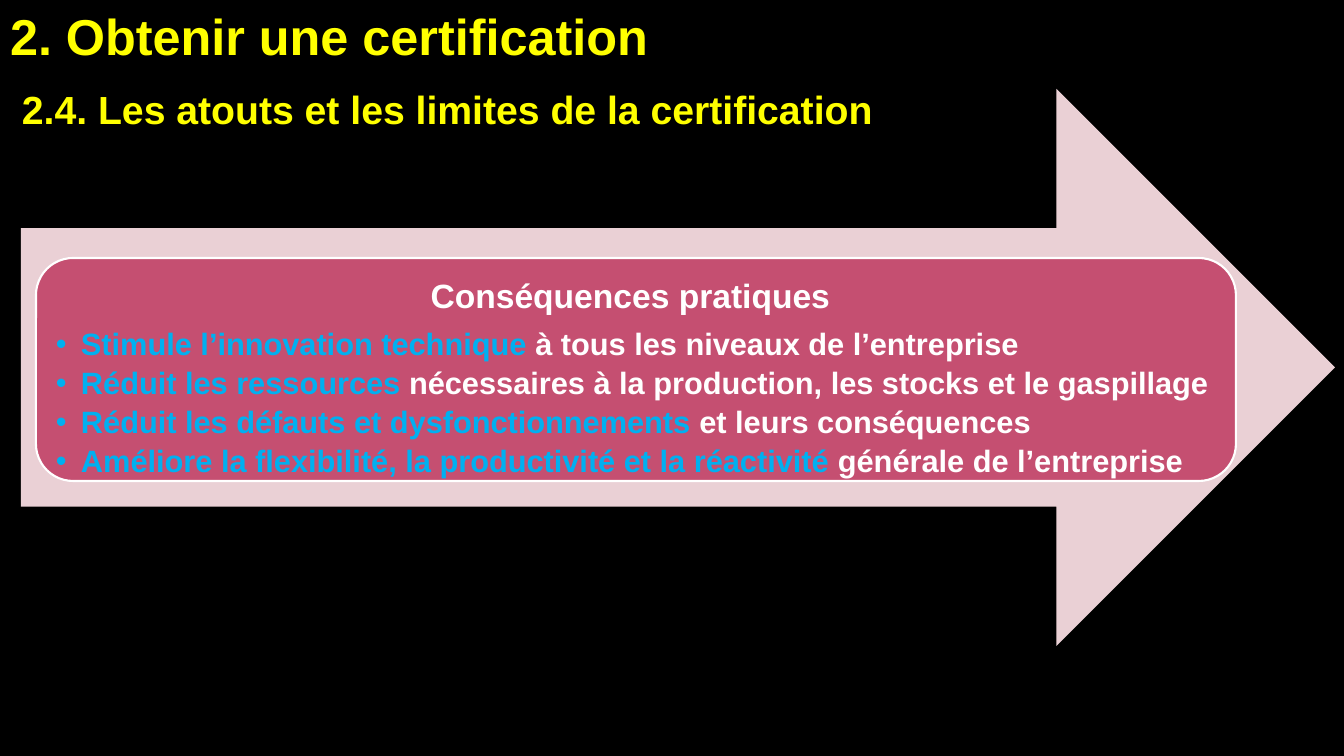
from lxml import etree
from pptx import Presentation
from pptx import util as u
from pptx.dml.color import RGBColor
from pptx.enum import shapes, text
from pptx.oxml.ns import qn

TITLE = "2. Obtenir une certification"
SUBTITLE = "2.4. Les atouts et les limites de la certification"
HEADING = "Conséquences pratiques "
BENEFITS = [
    ("Stimule l’innovation technique ", "à tous les niveaux de l’entreprise"),
    ("Réduit les ressources ", "nécessaires à la production, les stocks et le gaspillage"),
    ("Réduit les défauts et dysfonctionnements ", "et leurs conséquences"),
    ("Améliore la flexibilité, la productivité et la réactivité ", "générale de l’entreprise"),
]
BLACK, WHITE, YELLOW, BLUE = "000000", "FFFFFF", "FFFF00", "00B0F0"
PINK, ROSE = "EAD0D5", "C54F71"
INDENT = 25


def px(length):
    return u.Emu(round(length * 914400 / 100.8))


def color(value):
    return RGBColor.from_string(value)


def place(shape, *box):
    shape.left, shape.top, shape.width, shape.height = map(px, box)


def prepare(frame, inset, wrap=True):
    frame.word_wrap = wrap
    frame.auto_size = text.MSO_AUTO_SIZE.NONE
    frame.vertical_anchor = text.MSO_ANCHOR.TOP
    frame.margin_left = frame.margin_right = px(10)
    frame.margin_top = frame.margin_bottom = px(inset)


def style(paragraph, size, shade, align=text.PP_ALIGN.LEFT, spacing=1.0, after=0):
    paragraph.font.name = "Arial"
    paragraph.font.size = u.Pt(size)
    paragraph.font.bold = True
    paragraph.font.color.rgb = color(shade)
    paragraph.alignment = align
    paragraph.line_spacing = spacing
    paragraph.space_before = u.Pt(0)
    paragraph.space_after = u.Pt(after)


def set_bullet(paragraph, character):
    properties = paragraph._p.get_or_add_pPr()
    indent = px(INDENT) if character else 0
    properties.set("marL", str(indent))
    properties.set("indent", str(-indent))
    if character:
        etree.SubElement(properties, qn("a:buChar")).set("char", character)
    else:
        etree.SubElement(properties, qn("a:buNone"))


def add_panel(slide, kind, box, fill, line=None):
    shape = slide.shapes.add_shape(kind, *map(px, box))
    shape.shadow.inherit = False
    shape.fill.solid()
    shape.fill.fore_color.rgb = color(fill)
    if line:
        shape.line.color.rgb = color(line)
        shape.line.width = u.Pt(1.5)
    else:
        shape.line.fill.background()


def add_titles(slide):
    title = slide.shapes.title
    place(title, 0, 0, 794, 72)
    subtitle = slide.shapes.add_textbox(*map(px, (12, 80, 881, 57)))
    for shape, words, size, wrap in ((title, TITLE, 36, True), (subtitle, SUBTITLE, 28, False)):
        prepare(shape.text_frame, 5, wrap)
        shape.text_frame.text = words
        style(shape.text_frame.paragraphs[0], size, YELLOW)


def add_benefits(slide):
    body = slide.placeholders[1]
    place(body, 46, 269, 1178, 202)
    slide.shapes._spTree.append(body._element)
    frame = body.text_frame
    prepare(frame, 10)
    heading = frame.paragraphs[0]
    heading.text = HEADING
    style(heading, 24, WHITE, text.PP_ALIGN.CENTER, 0.9, 10)
    set_bullet(heading, None)
    for benefit in BENEFITS:
        paragraph = frame.add_paragraph()
        for words, shade in zip(benefit, (BLUE, WHITE)):
            run = paragraph.add_run()
            run.text = words
            run.font.color.rgb = color(shade)
        style(paragraph, 22, WHITE, spacing=0.9, after=4)
        set_bullet(paragraph, "•")


def main():
    presentation = Presentation()
    presentation.slide_width, presentation.slide_height = px(1344), px(756)
    slide = presentation.slides.add_slide(presentation.slide_layouts[1])
    slide.background.fill.solid()
    slide.background.fill.fore_color.rgb = color(BLACK)
    add_titles(slide)
    add_panel(slide, shapes.MSO_SHAPE.RIGHT_ARROW, (21, 89, 1314, 557), PINK)
    add_panel(slide, shapes.MSO_SHAPE.ROUNDED_RECTANGLE, (36, 258, 1200, 223), ROSE, WHITE)
    add_benefits(slide)
    presentation.save("out.pptx")


if __name__ == "__main__":
    main()
